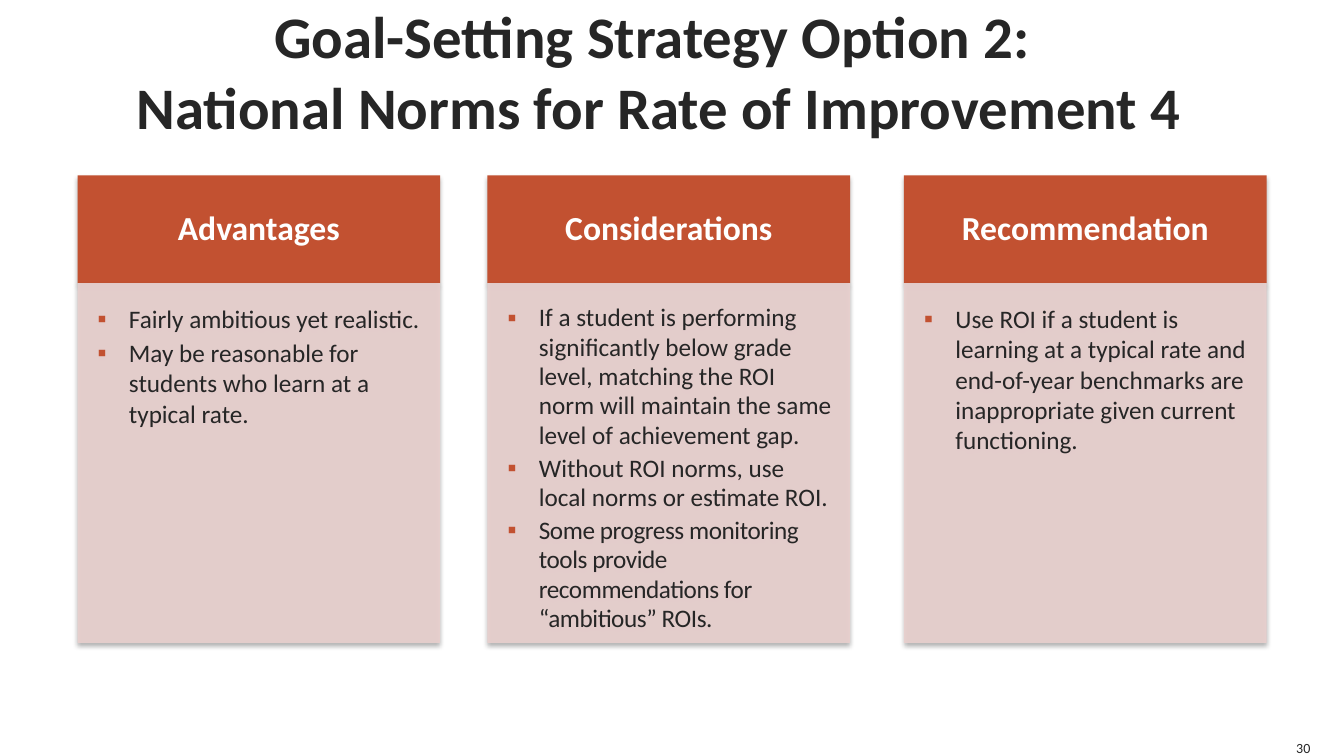
import pptx
import pptx.dml.color
import pptx.enum.shapes
import pptx.enum.text
import pptx.oxml
import pptx.oxml.ns
import pptx.util

Pt = pptx.util.Pt
ALIGN = pptx.enum.text.PP_ALIGN
ANCHOR = pptx.enum.text.MSO_ANCHOR
INK, RUST, BLUSH, WHITE = "262626", "C25131", "E9D0CE", "FFFFFF"

HEADING_TOP, HEADING_HEIGHT = 125.3, 77
BODY_HEIGHT, COLUMN_WIDTH = 257, 259
HEADING_INSETS = (13.7, 7.9, 13.7, 7.9)
BODY_INSETS = (14.4, 14.4, 10.1, 11.5)
HANGING = 22.3

TITLE = "Goal-Setting Strategy Option 2: \vNational Norms for Rate of Improvement 4"
COLUMNS = [
    (55.4, "Advantages", 1.0, [
        ("Fairly ambitious yet realistic.", 0),
        ("May be reasonable for students who learn at a typical rate.", 0),
    ]),
    (348.2, "Considerations", 0.97, [
        ("If a student is performing significantly below grade level, matching "
         "the ROI norm will maintain the same level of achievement gap.", 0),
        ("Without ROI norms, use local norms or estimate ROI.", 0),
        ("Some progress monitoring tools provide recommendations for "
         "“ambitious” ROIs.", -0.3),
    ]),
    (645.7, "Recommendation", 1.0, [
        ("Use ROI if a student is learning at a typical rate and end-of-year "
         "benchmarks are inappropriate given current functioning.", 0),
    ]),
]


def rgb(code):
    """Turn a hex string into a colour."""
    return pptx.dml.color.RGBColor.from_string(code)


def apply(target, values):
    """Set each attribute named in a dict of format values."""
    for attribute, value in values.items():
        setattr(target, attribute, value)


def xml(tag, **attributes):
    """Build one DrawingML element."""
    element = pptx.oxml.parse_xml(f"<a:{tag} {pptx.oxml.ns.nsdecls('a')}/>")
    for key, value in attributes.items():
        element.set(key, str(value))
    return element


def set_frame(frame, insets, anchor, wrap=True):
    """Set the insets, anchor and wrapping of a text frame."""
    left, top, right, bottom = insets
    apply(frame, {
        "margin_left": Pt(left), "margin_top": Pt(top),
        "margin_right": Pt(right), "margin_bottom": Pt(bottom),
        "vertical_anchor": anchor, "word_wrap": wrap,
    })


def write(paragraph, words, size, colour, bold=False, **layout):
    """Fill a paragraph with formatted words."""
    apply(paragraph, layout)
    paragraph.text = words
    for run in paragraph.runs:
        apply(run.font, {"name": "Calibri", "size": Pt(size), "bold": bold})
        run.font.color.rgb = rgb(colour)


def add_label(slide, box, words, size, align, anchor, bold=False, wrap=True):
    """Add a plain text box without insets."""
    frame = slide.shapes.add_textbox(*map(Pt, box)).text_frame
    set_frame(frame, (0, 0, 0, 0), anchor, wrap)
    write(frame.paragraphs[0], words, size, INK, bold, alignment=align)


def add_panel(slide, box, colour, insets, anchor, opacity=100):
    """Add a shadowed rectangle and return its text frame."""
    panel = slide.shapes.add_shape(
        pptx.enum.shapes.MSO_SHAPE.RECTANGLE, *map(Pt, box))
    panel.fill.solid()
    panel.fill.fore_color.rgb = rgb(colour)
    panel.line.fill.background()
    panel.shadow.inherit = False
    properties = panel._element.spPr
    if opacity < 100:
        fill_colour = properties.find(".//" + pptx.oxml.ns.qn("a:srgbClr"))
        fill_colour.append(xml("alpha", val=opacity * 1000))
    shadow = xml("outerShdw", blurRad=Pt(3.5), dist=Pt(2.2), dir=5400000,
                 rotWithShape=0)
    shade = xml("srgbClr", val="000000")
    shade.append(xml("alpha", val=32000))
    shadow.append(shade)
    properties.find(pptx.oxml.ns.qn("a:effectLst")).append(shadow)
    set_frame(panel.text_frame, insets, anchor)
    return panel.text_frame


def add_bullet(paragraph, words, line_spacing, tracking):
    """Write one bulleted paragraph with a hanging indent."""
    properties = paragraph._p.get_or_add_pPr()
    properties.set("marL", str(Pt(HANGING)))
    properties.set("indent", str(-Pt(HANGING)))
    bullet_colour = xml("buClr")
    bullet_colour.append(xml("srgbClr", val=RUST))
    properties.extend([bullet_colour, xml("buFont", typeface="Calibri"),
                       xml("buChar", char="▪")])
    write(paragraph, words, 18, INK, alignment=ALIGN.LEFT,
          line_spacing=line_spacing, space_after=Pt(2.7))
    if tracking:
        paragraph.runs[0].font._element.set("spc", str(round(tracking * 100)))


def add_column(slide, left, heading, line_spacing, points):
    """Add a heading panel with its panel of points below."""
    heading_frame = add_panel(
        slide, (left, HEADING_TOP, COLUMN_WIDTH, HEADING_HEIGHT),
        RUST, HEADING_INSETS, ANCHOR.MIDDLE)
    write(heading_frame.paragraphs[0], heading, 24, WHITE, True,
          alignment=ALIGN.CENTER, line_spacing=0.9)
    body_frame = add_panel(
        slide, (left, HEADING_TOP + HEADING_HEIGHT, COLUMN_WIDTH, BODY_HEIGHT),
        BLUSH, BODY_INSETS, ANCHOR.TOP, 90)
    for index, (words, tracking) in enumerate(points):
        paragraph = body_frame.add_paragraph() if index else body_frame.paragraphs[0]
        add_bullet(paragraph, words, line_spacing, tracking)


def main():
    """Build the slide and save it."""
    deck = pptx.Presentation()
    apply(deck, {"slide_width": Pt(960), "slide_height": Pt(540)})
    slide = deck.slides.add_slide(deck.slide_layouts[6])
    add_label(slide, (36, 0, 869, 100.8), TITLE, 42,
              ALIGN.CENTER, ANCHOR.MIDDLE, bold=True)
    for column in COLUMNS:
        add_column(slide, *column)
    add_label(slide, (923.8, 527.8, 12.2, 12.2), "30", 10,
              ALIGN.RIGHT, ANCHOR.BOTTOM, wrap=False)
    deck.save("out.pptx")


if __name__ == "__main__":
    main()
